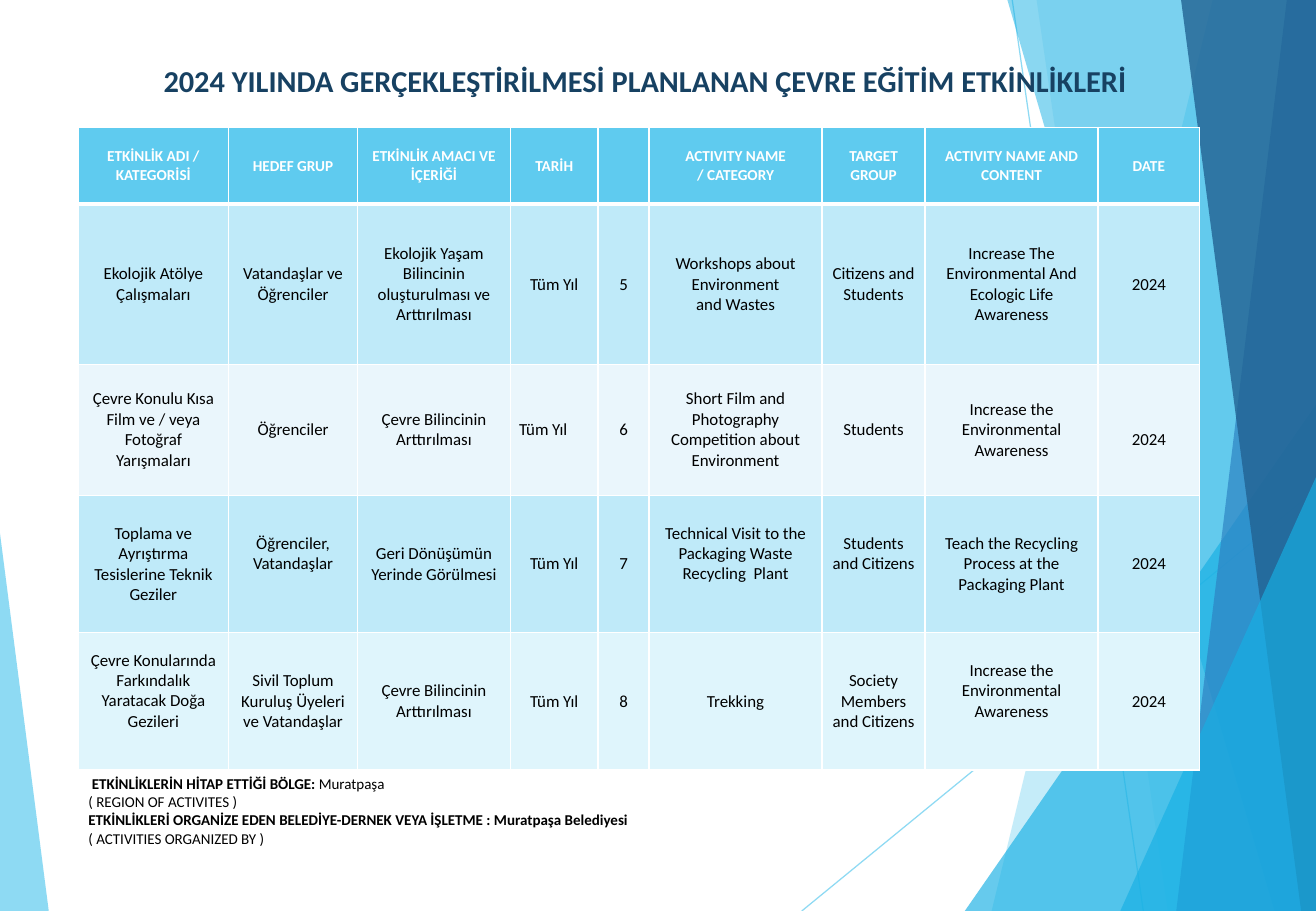
from lxml.etree import SubElement
from pptx import Presentation
from pptx.dml.color import RGBColor
from pptx.enum.shapes import MSO_CONNECTOR as Connector, MSO_SHAPE as Shape
from pptx.enum.text import MSO_ANCHOR as Anchor, PP_ALIGN as Align
from pptx.oxml.ns import qn
from pptx.util import Cm, Pt

SKY = RGBColor(0x5F, 0xCB, 0xEF)
CYAN = RGBColor(0x17, 0xB0, 0xE4)
BLUE = RGBColor(0x2E, 0x83, 0xC3)
DEEP = RGBColor(0x22, 0x62, 0x92)
NAVY = RGBColor(0x17, 0x41, 0x62)
WHITE = RGBColor(0xFF, 0xFF, 0xFF)
BLACK = RGBColor(0, 0, 0)
MID_ROW = RGBColor(0xBF, 0xEA, 0xF9)
PALE_ROW = RGBColor(0xEA, 0xF6, 0xFC)
LAST_ROW = RGBColor(0xDF, 0xF5, 0xFC)
FONT = "Calibri"
WIDTH, HEIGHT = 27.51, 19.05


def set_opacity(shape, percent):
    for colour in shape.element.spPr.iter(qn("a:srgbClr")):
        SubElement(colour, qn("a:alpha"), val=str(percent * 1000))


def add_span(para, text, **formats):
    span = para.add_run()
    span.text = text
    span.font.name = FONT
    for name, value in formats.items():
        if name == "color":
            span.font.color.rgb = value
        else:
            setattr(span.font, name, value)


deck = Presentation()
deck.slide_width, deck.slide_height = Cm(WIDTH), Cm(HEIGHT)
page = deck.slides.add_slide(deck.slide_layouts[6])

# Thin background lines
for ends in [(21.16, 0, 23.9, HEIGHT), (WIDTH, 10.24, 16.76, HEIGHT)]:
    ray = page.shapes.add_connector(Connector.STRAIGHT, *map(Cm, ends))
    ray.line.color.rgb = SKY
    ray.line.width = Pt(0.75)
    set_opacity(ray, 70)
    SubElement(ray.element.spPr, qn("a:effectLst"))

# Bands give the x of their slanted edge at top and bottom; they fill to the right.
# Triangles give left, top, width and the position of the tip; they stand on the bottom edge.
facets = [
    ("band", (25.35, 20.73), SKY, 36),
    ("band", (21.67, 24.41), SKY, 20),
    ("triangle", (20.17, 8.46, 7.34, 1), CYAN, 66),
    ("band", (21.06, 26.64), CYAN, 50),
    ("band", (26.9, 24.59), BLUE, 70),
    ("band", (24.69, 27.2), DEEP, 80),
    ("triangle", (23.42, 9.98, 4.09, 1), CYAN, 66),
    ("triangle", (0, 11.15, 1.02, 0), SKY, 70),
]
for kind, place, colour, opacity in facets:
    if kind == "band":
        top_x, bottom_x = place
        outline = page.shapes.build_freeform(Cm(top_x), 0)
        corners = [(WIDTH, 0), (WIDTH, HEIGHT), (bottom_x, HEIGHT)]
        outline.add_line_segments([(Cm(x), Cm(y)) for x, y in corners])
        facet = outline.convert_to_shape()
    else:
        left, top, width, tip = place
        facet = page.shapes.add_shape(Shape.ISOSCELES_TRIANGLE, Cm(left), Cm(top),
                                      Cm(width), Cm(HEIGHT - top))
        facet.adjustments[0] = tip
    facet.shadow.inherit = False
    facet.fill.solid()
    facet.fill.fore_color.rgb = colour
    facet.line.fill.background()
    set_opacity(facet, opacity)

title = page.shapes.add_textbox(Cm(2.9), Cm(1.17), Cm(21.18), Cm(0.99))
title.text_frame.word_wrap = True
para = title.text_frame.paragraphs[0]
para.alignment = Align.CENTER
add_span(para, "2024 YILINDA GERÇEKLEŞTİRİLMESİ PLANLANAN ÇEVRE EĞİTİM ETKİNLİKLERİ",
         size=Pt(18), bold=True, color=NAVY)

# Activity table
column_widths = [3.15, 2.69, 3.2, 1.83, 1.07, 3.61, 2.16, 3.61, 2.13]
row_heights = [1.6, 3.35, 2.74, 2.87, 2.87]
row_fills = [SKY, MID_ROW, PALE_ROW, MID_ROW, LAST_ROW]
activities = [
    ["ETKİNLİK ADI / KATEGORİSİ", "HEDEF GRUP", "ETKİNLİK AMACI VE İÇERİĞİ", "TARİH", "",
     "ACTIVITY NAME\n/ CATEGORY", "TARGET GROUP", "ACTIVITY NAME AND CONTENT", "DATE"],
    ["Ekolojik Atölye Çalışmaları", "Vatandaşlar ve Öğrenciler",
     "Ekolojik Yaşam Bilincinin oluşturulması ve Arttırılması", "Tüm Yıl", "5",
     "Workshops about Environment\nand Wastes", "Citizens and Students",
     "Increase The Environmental And Ecologic Life Awareness", "2024"],
    ["Çevre Konulu Kısa Film ve / veya Fotoğraf Yarışmaları", "Öğrenciler",
     "Çevre Bilincinin Arttırılması", "Tüm Yıl", "6",
     "Short Film and Photography Competition about Environment", "Students",
     "Increase the Environmental Awareness", "2024"],
    ["Toplama ve Ayrıştırma Tesislerine Teknik Geziler", "Öğrenciler, Vatandaşlar",
     "Geri Dönüşümün Yerinde Görülmesi", "Tüm Yıl", "7",
     "Technical Visit to the Packaging Waste Recycling  Plant", "Students and Citizens",
     "Teach the Recycling Process at the Packaging Plant", "2024"],
    ["Çevre Konularında Farkındalık Yaratacak Doğa Gezileri",
     "Sivil Toplum Kuruluş Üyeleri ve Vatandaşlar", "Çevre Bilincinin Arttırılması",
     "Tüm Yıl", "8", "Trekking", "Society Members and Citizens",
     "Increase the Environmental Awareness", "2024"],
]
raised_cells = {(3, 1), (3, 5), (3, 6), (4, 0), (4, 7)}
lowered_cells = {(2, 8)}
left_cells = {(2, 3)}

frame = page.shapes.add_table(len(row_heights), len(column_widths), Cm(1.63), Cm(2.67),
                              Cm(sum(column_widths)), Cm(sum(row_heights)))
table = frame.table
for column, width in zip(table.columns, column_widths):
    column.width = Cm(width)
for row, height in zip(table.rows, row_heights):
    row.height = Cm(height)

for r, texts in enumerate(activities):
    header = r == 0
    for c, text in enumerate(texts):
        cell = table.cell(r, c)
        margins = {
            "margin_left": Cm(0.18),
            "margin_right": Cm(0.18),
            "margin_top": Cm(0.53 if (r, c) in lowered_cells else 0.1),
            "margin_bottom": Cm(0.53 if (r, c) in raised_cells else 0.1),
            "vertical_anchor": Anchor.MIDDLE,
        }
        for name, value in margins.items():
            setattr(cell, name, value)

        properties = cell._tc.get_or_add_tcPr()
        for side in ("L", "R", "T", "B"):
            thick = (r, side) in {(0, "B"), (1, "T")}
            border = SubElement(properties, qn(f"a:ln{side}"), w=str(Pt(3 if thick else 1)))
            border_fill = SubElement(border, qn("a:solidFill"))
            SubElement(border_fill, qn("a:srgbClr"), val=str(WHITE))
        cell.fill.solid()
        cell.fill.fore_color.rgb = row_fills[r]

        for i, line in enumerate(text.split("\n")):
            para = cell.text_frame.paragraphs[0] if i == 0 else cell.text_frame.add_paragraph()
            para.alignment = Align.LEFT if (r, c) in left_cells else Align.CENTER
            if line:
                add_span(para, line, size=Pt(9 if header else 10), bold=header,
                         color=WHITE if header else BLACK)

# Region and organiser; each line is a list of (text, bold)
footer_lines = [
    [(" ETKİNLİKLERİN HİTAP ETTİĞİ BÖLGE: ", True), ("Muratpaşa", False)],
    [("( REGION OF ACTIVITES )", False)],
    [("ETKİNLİKLERİ ORGANİZE EDEN BELEDİYE-DERNEK VEYA İŞLETME : Muratpaşa Belediyesi", True)],
    [("( ACTIVITIES ORGANIZED BY )", False)],
]
footer = page.shapes.add_textbox(Cm(1.6), Cm(16.08), Cm(20.14), Cm(1.78))
footer.text_frame.word_wrap = True
for i, spans in enumerate(footer_lines):
    para = footer.text_frame.paragraphs[0] if i == 0 else footer.text_frame.add_paragraph()
    for text, bold in spans:
        add_span(para, text, size=Pt(8.9), bold=bold, color=BLACK)

deck.save("out.pptx")
